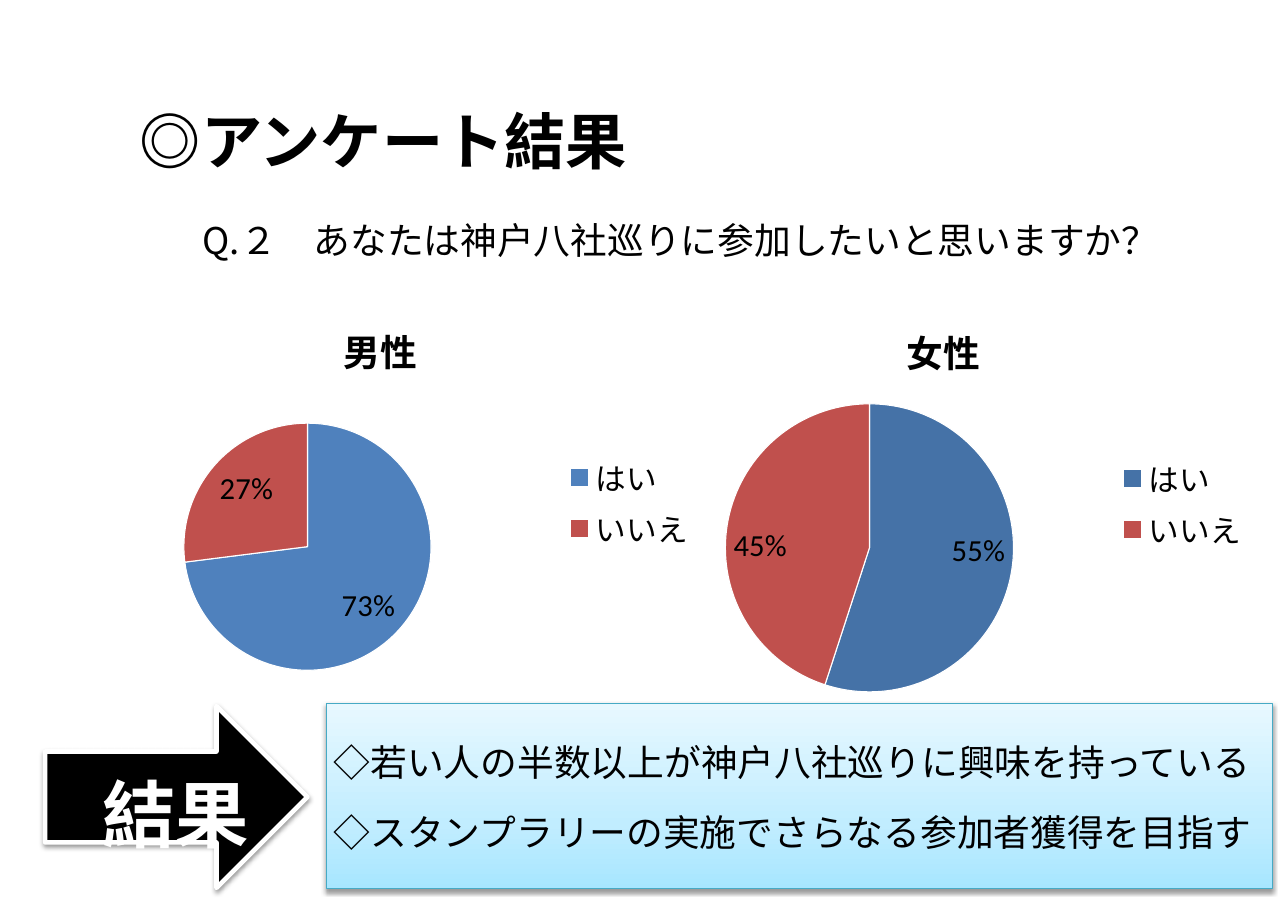
"""Build the survey result slide with two pie charts and a conclusion."""
from copy import deepcopy

from lxml import etree
from pptx import Presentation
from pptx.chart.data import CategoryChartData
from pptx.dml.color import RGBColor
from pptx.enum.chart import XL_CHART_TYPE, XL_LABEL_POSITION, XL_LEGEND_POSITION
from pptx.enum.shapes import MSO_SHAPE
from pptx.enum.text import MSO_ANCHOR, PP_ALIGN
from pptx.oxml import parse_xml
from pptx.oxml.ns import qn
from pptx.util import Inches, Pt

PIE = XL_CHART_TYPE.PIE
LABEL_INSIDE_END = XL_LABEL_POSITION.INSIDE_END
LEGEND_RIGHT = XL_LEGEND_POSITION.RIGHT
ARROW, RECTANGLE = MSO_SHAPE.RIGHT_ARROW, MSO_SHAPE.RECTANGLE
MIDDLE, LEFT = MSO_ANCHOR.MIDDLE, PP_ALIGN.LEFT
TITLE_ONLY = 5
WIDTH, HEIGHT = Inches(11.69), Inches(8.27)
TEXT_FONT, CHART_FONT = "Noto Sans CJK JP", "Calibri"
COLORS = {
    "black": "000000", "white": "FFFFFF", "blue": "4F81BD", "deep blue": "4572A7",
    "red": "C0504D", "panel line": "46AAC5",
}
PANEL_STOPS = [(0, "A7E6FF"), (0.35, "C1EDFF"), (1, "E7F8FF")]

HEADING = "◎アンケート結果"
QUESTION = "Q.２　あなたは神戸八社巡りに参加したいと思いますか？"
RESULT = "結果"
FINDINGS = [
    "◇若い人の半数以上が神戸八社巡りに興味を持っている",
    "◇スタンプラリーの実施でさらなる参加者獲得を目指す",
]
ANSWERS = ["はい", "いいえ"]
SURVEYS = [
    {"group": "女性", "shares": [55, 45], "colors": ["deep blue", "red"],
     "area": (48.67, 32.89, 49.19, 44.86), "pie": (0.155, 0.255, 0.456, 0.705)},
    {"group": "男性", "shares": [73, 27], "colors": ["blue", "red"],
     "area": (4.11, 32.77, 50.81, 44.86), "pie": (0.2, 0.305, 0.378, 0.605)},
]
AREAS = {
    "heading": (10.86, 10.5, 83.5, 9.7),
    "question": (15.74, 21.1, 78, 10.5),
    "arrow": (3.51, 77.51, 20.36, 19.95),
    "result": (7.96, 83.4, 11.5, 11.6),
    "findings": (25.32, 77.27, 73.48, 20.31),
}


def rgb(name):
    return RGBColor.from_string(COLORS.get(name, name))


def place(area):
    """Turn percentages of the slide into lengths."""
    return [int(share / 100 * side) for share, side in zip(area, (WIDTH, HEIGHT) * 2)]


def write(holder, lines, size, color="black", bold=False, gap=0, inset=0, wrap=True):
    frame = holder.text_frame
    frame.word_wrap = wrap
    frame.vertical_anchor = MIDDLE
    frame.margin_top = frame.margin_right = frame.margin_bottom = 0
    frame.margin_left = Inches(inset)
    for index, line in enumerate(lines):
        paragraph = frame.add_paragraph() if index else frame.paragraphs[0]
        paragraph.alignment = LEFT
        paragraph.space_before = Pt(gap if index else 0)
        run = paragraph.add_run()
        run.text = line
        font = run.font
        font.size, font.bold, font.name = Pt(size), bold, TEXT_FONT
        font.color.rgb = rgb(color)
        latin = run._r.rPr.find(qn("a:latin"))
        east_asian = etree.Element(qn("a:ea"), typeface=TEXT_FONT)
        latin.addnext(east_asian)


def add_block(slide, kind, area, line, line_width):
    block = slide.shapes.add_shape(kind, *place(area))
    block.line.color.rgb = rgb(line)
    block.line.width = Pt(line_width)
    block.shadow.inherit = False
    effects = block._element.spPr.find(qn("a:effectLst"))
    shadow = etree.SubElement(effects, qn("a:outerShdw"), blurRad=str(Pt(3.1)),
                              dist=str(Pt(1.6)), dir="5400000", rotWithShape="0")
    shade = etree.SubElement(shadow, qn("a:srgbClr"), val=COLORS["black"])
    etree.SubElement(shade, qn("a:alpha"), val="38000")
    return block


def fill_panel(panel):
    panel.fill.gradient()
    panel.fill.gradient_angle = 90
    stop_list = panel._element.spPr.find(".//" + qn("a:gsLst"))
    stop_list.append(deepcopy(stop_list[0]))
    for stop, (position, color) in zip(panel.fill.gradient_stops, PANEL_STOPS):
        stop.position = position
        stop.color.rgb = rgb(color)


def set_pie_area(chart, area):
    plot_area = chart._chartSpace.chart.plotArea
    for old in plot_area.findall(qn("c:layout")):
        plot_area.remove(old)
    values = "".join(f'<c:{tag} val="{share}"/>' for tag, share in zip("xywh", area))
    plot_area.insert(0, parse_xml(
        '<c:layout xmlns:c="http://schemas.openxmlformats.org/drawingml/2006/chart">'
        '<c:manualLayout><c:layoutTarget val="inner"/><c:xMode val="edge"/>'
        f'<c:yMode val="edge"/>{values}</c:manualLayout></c:layout>'))


def format_chart_font(font, size, bold=False):
    font.name, font.size, font.bold = CHART_FONT, Pt(size), bold
    font.color.rgb = rgb("black")


def add_survey(slide, survey):
    data = CategoryChartData()
    data.categories = ANSWERS
    data.add_series(survey["group"], survey["shares"])
    chart = slide.shapes.add_chart(PIE, *place(survey["area"]), data).chart
    format_chart_font(chart.font, 20)
    chart.has_title = True
    chart.chart_title.include_in_layout = False
    title = chart.chart_title.text_frame
    title.text = survey["group"]
    format_chart_font(title.paragraphs[0].runs[0].font, 24, bold=True)
    chart.has_legend = True
    chart.legend.position = LEGEND_RIGHT
    chart.legend.include_in_layout = False
    format_chart_font(chart.legend.font, 20)
    plot = chart.plots[0]
    plot.vary_by_categories = True
    plot.has_data_labels = True
    labels = plot.data_labels
    labels.show_percentage, labels.show_value = True, False
    labels.number_format, labels.number_format_is_linked = "0%", False
    labels.position = LABEL_INSIDE_END
    format_chart_font(labels.font, 20)
    for index, color in enumerate(survey["colors"]):
        look = plot.series[0].points[index].format
        look.fill.solid()
        look.fill.fore_color.rgb = rgb(color)
        look.line.color.rgb = rgb("white")
        look.line.width = Pt(0.75)
    set_pie_area(chart, survey["pie"])


def main():
    deck = Presentation()
    deck.slide_width, deck.slide_height = WIDTH, HEIGHT
    slide = deck.slides.add_slide(deck.slide_layouts[TITLE_ONLY])
    heading = slide.shapes.title
    heading.left, heading.top, heading.width, heading.height = place(AREAS["heading"])
    write(heading, [HEADING], 40, bold=True)
    question = slide.shapes.add_textbox(*place(AREAS["question"]))
    write(question, [QUESTION], 24)
    for survey in SURVEYS:
        add_survey(slide, survey)
    arrow = add_block(slide, ARROW, AREAS["arrow"], "white", 3)
    arrow.fill.solid()
    arrow.fill.fore_color.rgb = rgb("black")
    result = slide.shapes.add_textbox(*place(AREAS["result"]))
    write(result, [RESULT], 48, color="white", bold=True, wrap=False)
    findings = add_block(slide, RECTANGLE, AREAS["findings"], "panel line", 0.75)
    fill_panel(findings)
    write(findings, FINDINGS, 24, gap=17, inset=0.07)
    deck.save("out.pptx")


if __name__ == "__main__":
    main()
